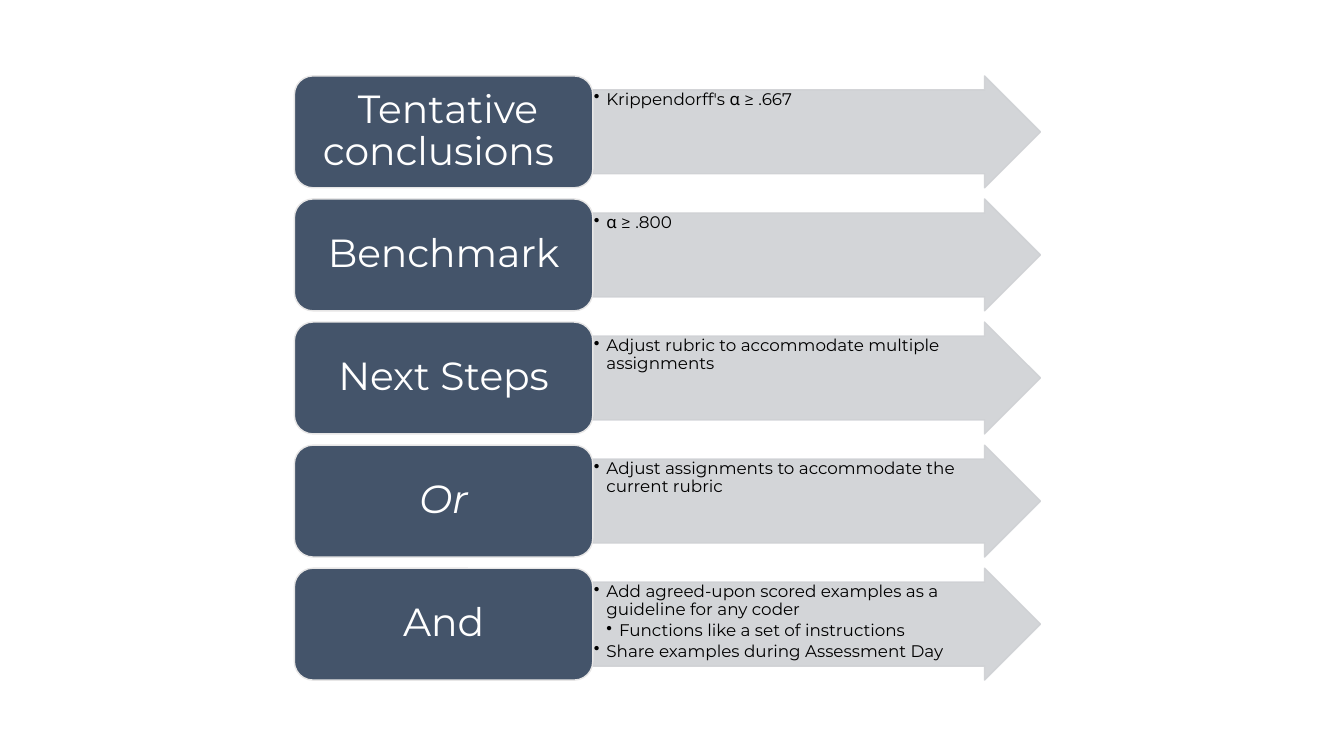
"""Build a slide of five labelled arrows: conclusions, benchmark and next steps."""
from dataclasses import dataclass

from lxml import etree
from pptx import Presentation
from pptx.dml.color import RGBColor
from pptx.enum import shapes, text
from pptx.oxml import ns
from pptx.util import Inches, Pt


@dataclass
class Theme:
    box: str = "44546A"
    box_line: str = "E7E6E6"
    box_text: str = "FFFFFF"
    arrow: str = "CFD1D4"
    arrow_alpha: str = "90000"
    arrow_text: str = "000000"
    font: str = "Montserrat"
    space_font: str = "Calibri"
    label_size: int = 28
    point_size: int = 12


theme = Theme()

rows = [
    ([(" ", theme.space_font), ("Tentative conclusions ", theme.font)],
     [(1, "Krippendorff's α ≥ .667")]),
    ([("Benchmark", theme.font)], [(1, "α ≥ .800")]),
    ([("Next Steps", theme.font)],
     [(1, "Adjust rubric to accommodate multiple assignments")]),
    ([("Or", theme.font)],
     [(1, "Adjust assignments to accommodate the current rubric")]),
    ([("And", theme.font)],
     [(1, "Add agreed-upon scored examples as a guideline for any coder "),
      (2, "Functions like a set of instructions"),
      (1, "Share examples during Assessment Day")]),
]


def add_block(kind, left, top, width, fill, line, insets):
    sp = slide.shapes.add_shape(kind, left, top, width, row_h)
    sp.shadow.inherit = False
    sp.fill.solid()
    sp.fill.fore_color.rgb = RGBColor.from_string(fill)
    sp.line.color.rgb = RGBColor.from_string(line)
    sp.line.width = Pt(1)
    tf = sp.text_frame
    tf.word_wrap = True
    tf.margin_left = tf.margin_right = Inches(insets[0])
    tf.margin_top = tf.margin_bottom = Inches(insets[1])
    return sp


def add_run(p, words, font, size, color):
    r = p.add_run()
    r.text = words
    r.font.name = font
    r.font.size = Pt(size)
    r.font.color.rgb = RGBColor.from_string(color)
    return r


prs = Presentation()
prs.slide_width, prs.slide_height = Inches(13.33), Inches(7.5)
slide = prs.slides.add_slide(prs.slide_layouts[6])

row_h = Inches(1.11)
pitch = int(row_h * 1.1)
top = (prs.slide_height - pitch * (len(rows) - 1) - row_h) // 2
left = Inches(2.92)
box_w = Inches(2.96)
arrow_w = int(box_w * 1.5)
indent = Inches(0.125)

for i, (label, points) in enumerate(rows):
    y = top + i * pitch

    arrow = add_block(shapes.MSO_SHAPE.RIGHT_ARROW, left + box_w, y, arrow_w,
                      theme.arrow, theme.arrow, (0.01, 0.01))
    arrow.adjustments[0] = 0.75
    arrow.adjustments[1] = 0.5
    for clr in arrow.element.spPr.iter(ns.qn("a:srgbClr")):
        etree.SubElement(clr, ns.qn("a:alpha"), val=theme.arrow_alpha)
    tf = arrow.text_frame
    tf.vertical_anchor = text.MSO_ANCHOR.TOP
    for n, (level, words) in enumerate(points):
        p = tf.add_paragraph() if n else tf.paragraphs[0]
        p.level = level
        p.alignment = text.PP_ALIGN.LEFT
        p.line_spacing = 0.9
        p.space_after = Pt(theme.point_size * 0.15)
        pPr = p._p.get_or_add_pPr()
        pPr.set("marL", str(indent * level))
        pPr.set("indent", str(-indent))
        etree.SubElement(pPr, ns.qn("a:buChar"), char="•")
        add_run(p, words, theme.font, theme.point_size, theme.arrow_text)

    box = add_block(shapes.MSO_SHAPE.ROUNDED_RECTANGLE, left, y, box_w,
                    theme.box, theme.box_line, (0.12, 0.06))
    tf = box.text_frame
    tf.vertical_anchor = text.MSO_ANCHOR.MIDDLE
    p = tf.paragraphs[0]
    p.alignment = text.PP_ALIGN.CENTER
    p.line_spacing = 0.9
    for words, font in label:
        r = add_run(p, words, font, theme.label_size, theme.box_text)
        if words == "Or":
            r.font.italic = True

prs.save("out.pptx")
